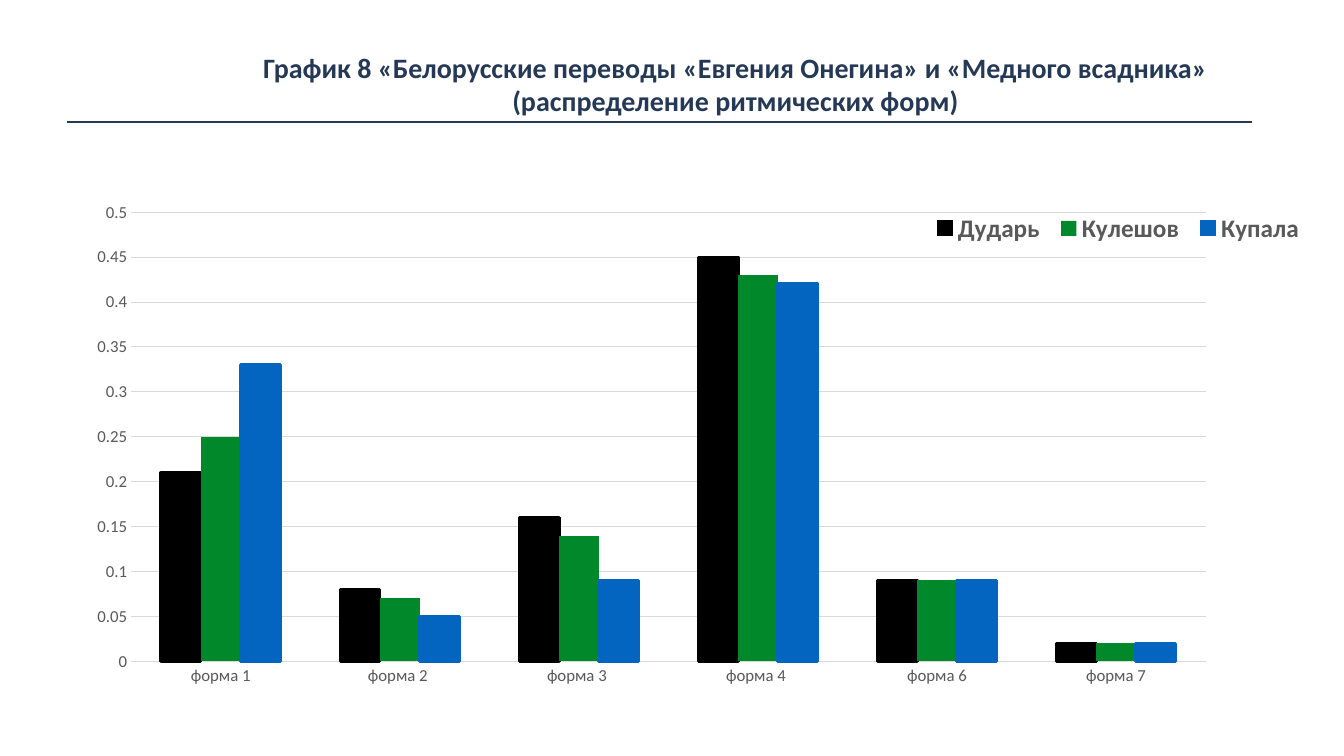
"""Build a slide with a clustered column chart of rhythmic forms in three translations."""
from dataclasses import dataclass

from pptx import Presentation
from pptx import util as u
from pptx.chart import data as cd
from pptx.dml.color import RGBColor
from pptx.enum import chart as ch, shapes, text
from pptx.oxml import parse_xml
from pptx.oxml.ns import nsdecls, qn

FONT = "Calibri"
COLORS = {
    "navy": "253957",
    "black": "000000",
    "green": "00882B",
    "blue": "0365C0",
    "label": "595959",
    "grid": "D9D9D9",
}
CATEGORIES = ("форма 1", "форма 2 ", "форма 3 ", "форма 4 ", "форма 6", "форма 7")
TITLE = (
    "График 8 «Белорусские переводы «Евгения Онегина» и «Медного всадника» ",
    "(распределение ритмических форм) ",
)


@dataclass(frozen=True)
class Translator:
    name: str
    color: str
    outlined: bool
    values: tuple[float, ...]


@dataclass(frozen=True)
class Layout:
    x: float
    y: float
    w: float
    h: float
    target: str = ""


TRANSLATORS = (
    Translator("Дударь", "black", True, (0.21, 0.08, 0.16, 0.45, 0.09, 0.02)),
    Translator("Кулешов", "green", False, (0.25, 0.07, 0.14, 0.43, 0.09, 0.02)),
    Translator("Купала", "blue", True, (0.33, 0.05, 0.09, 0.42, 0.09, 0.02)),
)
PLOT = Layout(0.051, 0.076, 0.859, 0.812, "inner")
LEGEND = Layout(0.685, 0.075, 0.31, 0.06)


def rgb(name: str) -> RGBColor:
    return RGBColor.from_string(COLORS[name])


def set_font(font, size: float, color: str, bold: bool = False) -> None:
    for key, value in {"name": FONT, "size": u.Pt(size), "bold": bold}.items():
        setattr(font, key, value)
    font.color.rgb = rgb(color)


def set_line(line, color: str, width: float) -> None:
    line.color.rgb = rgb(color)
    line.width = u.Pt(width)


def place(element, index: int, layout: Layout) -> None:
    for old in element.findall(qn("c:layout")):
        element.remove(old)
    target = f'<c:layoutTarget val="{layout.target}"/>' if layout.target else ""
    modes = "".join(f'<c:{k}Mode val="edge"/>' for k in "xy")
    sizes = "".join(f'<c:{k} val="{getattr(layout, k)}"/>' for k in "xywh")
    element.insert(index, parse_xml(
        f'<c:layout {nsdecls("c")}><c:manualLayout>{target}{modes}{sizes}'
        "</c:manualLayout></c:layout>"))


def add_title(s) -> None:
    sp = s.shapes.add_textbox(u.Cm(3.68), u.Cm(1.17), u.Cm(29.87), u.Cm(1.83))
    tf = sp.text_frame
    margins = {f"margin_{side}": u.Cm(0.1) for side in ("left", "top", "right", "bottom")}
    for key, value in {"word_wrap": True, **margins}.items():
        setattr(tf, key, value)
    tf.text = "\n".join(TITLE)
    for p in tf.paragraphs:
        p.alignment = text.PP_ALIGN.CENTER
        set_font(p.runs[0].font, 20, "navy", True)


def add_rule(s) -> None:
    y = u.Cm(3.07)
    rule = s.shapes.add_connector(shapes.MSO_CONNECTOR.STRAIGHT, u.Cm(1.68), y, u.Cm(31.55), y)
    set_line(rule.line, "navy", 1)
    rule._element.spPr.append(parse_xml(f'<a:effectLst {nsdecls("a")}/>'))


def add_chart(s) -> None:
    data = cd.CategoryChartData()
    data.categories = CATEGORIES
    for translator in TRANSLATORS:
        data.add_series(translator.name, translator.values)
    chart = s.shapes.add_chart(
        ch.XL_CHART_TYPE.COLUMN_CLUSTERED,
        u.Cm(1.7), u.Cm(4.29), u.Cm(31.52), u.Cm(13.94), data).chart
    chart.has_title = False
    set_font(chart.font, 10, "black")

    plot = chart.plots[0]
    for key, value in {"gap_width": 150, "overlap": 0, "vary_by_categories": False}.items():
        setattr(plot, key, value)
    for series, translator in zip(plot.series, TRANSLATORS):
        series.format.fill.solid()
        series.format.fill.fore_color.rgb = rgb(translator.color)
        if translator.outlined:
            set_line(series.format.line, translator.color, 2.25)
        else:
            series.format.line.fill.background()

    for axis in (chart.category_axis, chart.value_axis):
        axis.major_tick_mark = axis.minor_tick_mark = ch.XL_TICK_MARK.NONE
        set_font(axis.tick_labels.font, 12, "label")
    set_line(chart.category_axis.format.line, "grid", 0.75)
    values = chart.value_axis
    scale = {"minimum_scale": 0, "maximum_scale": 0.5, "major_unit": 0.05}
    for key, value in scale.items():
        setattr(values, key, value)
    values.format.line.fill.background()
    set_line(values.major_gridlines.format.line, "grid", 0.75)

    chart.has_legend = True
    legend = chart.legend
    legend.position = ch.XL_LEGEND_POSITION.BOTTOM
    legend.include_in_layout = False
    set_font(legend.font, 18, "label", True)
    place(legend._element, 1, LEGEND)
    place(chart._chartSpace.chart.plotArea, 0, PLOT)


def main() -> None:
    prs = Presentation()
    prs.slide_width, prs.slide_height = u.Cm(33.87), u.Cm(19.05)
    s = prs.slides.add_slide(prs.slide_layouts[6])
    add_title(s)
    add_rule(s)
    add_chart(s)
    prs.save("out.pptx")


if __name__ == "__main__":
    main()
